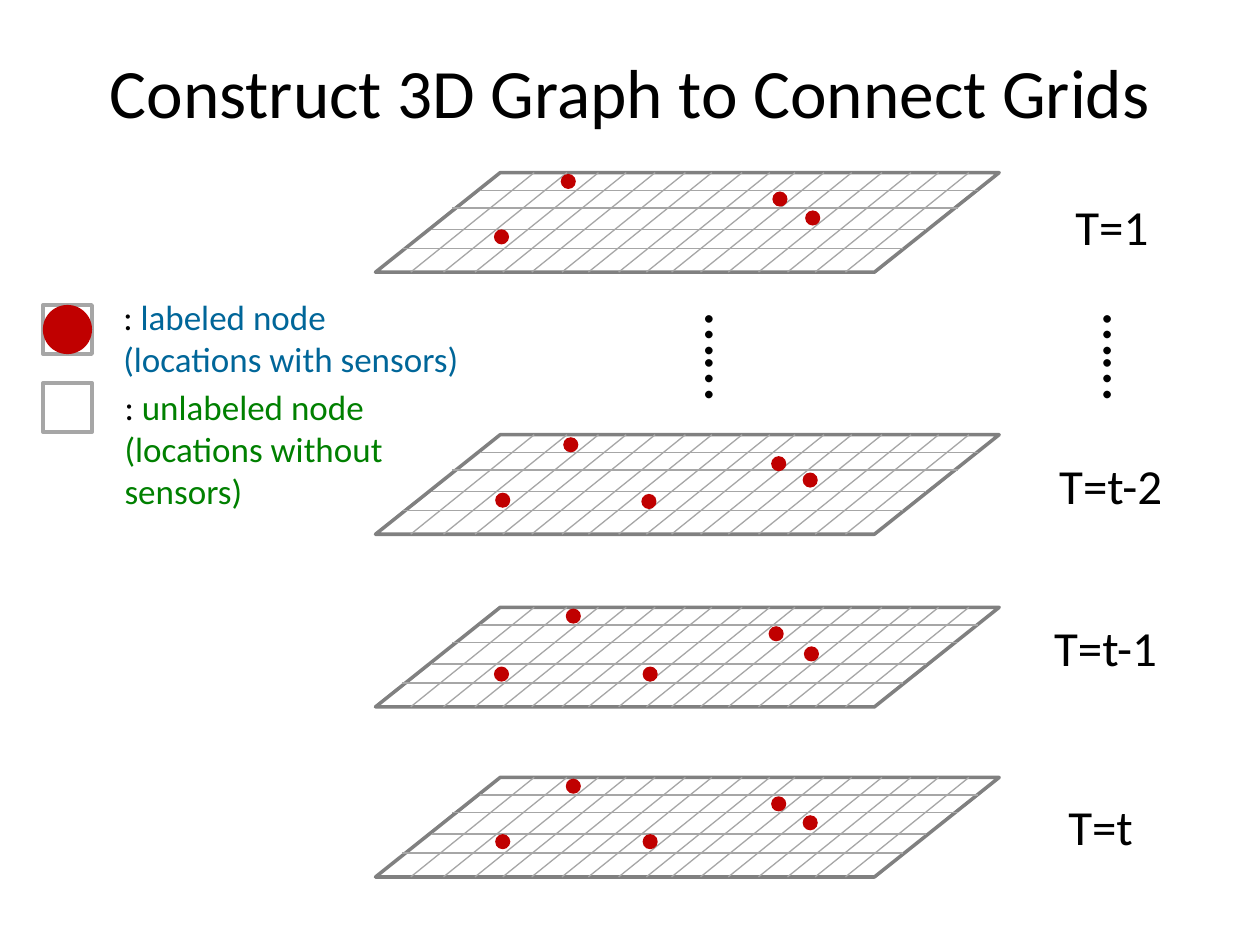
from lxml import etree
from pptx import Presentation
from pptx.dml.color import RGBColor
from pptx.enum import shapes, text
from pptx.oxml import ns
from pptx.util import Inches, Pt

BLACK = RGBColor(0x00, 0x00, 0x00)
RED = RGBColor(0xC0, 0x00, 0x00)
BLUE = RGBColor(0x00, 0x66, 0x99)
GREEN = RGBColor(0x00, 0x80, 0x00)
EDGE_GRAY = RGBColor(0x80, 0x80, 0x80)
GRID_GRAY = RGBColor(0xA6, 0xA6, 0xA6)
FONT = "Calibri"

TITLE = "Construct 3D Graph to Connect Grids"

# Each layer: label, label position, top of the grid, sensor positions (left, top)
LAYERS = [
    ("T=1", (8.26, 1.51), 1.37,
     [(6.39, 1.67), (4.45, 1.38), (3.92, 1.82), (6.13, 1.52)]),
    ("T=t-2", (8.25, 3.57), 3.45,
     [(6.12, 3.62), (3.93, 3.91), (6.37, 3.75), (4.47, 3.47), (5.09, 3.92)]),
    ("T=t-1", (8.21, 4.85), 4.82,
     [(6.38, 5.13), (4.49, 4.83), (5.1, 5.29), (3.92, 5.29), (6.1, 4.97)]),
    ("T=t", (8.17, 6.27), 6.17,
     [(6.37, 6.47), (4.49, 6.18), (5.1, 6.62), (3.93, 6.62), (6.12, 6.32)]),
]
GRID_LEFT, GRID_WIDTH, GRID_HEIGHT = 2.98, 4.95, 0.79
ROWS = [(3.81, 7.76, 0.14), (3.59, 7.6, 0.28), (3.43, 7.35, 0.45), (3.19, 7.17, 0.6)]
COLUMN_FEET = [3.26, 3.52, 3.77, 3.99, 4.22, 4.46, 4.67, 4.91,
               5.13, 5.33, 5.56, 5.78, 6.02, 6.25, 6.47, 6.71]
COLUMN_SLANT = 0.98
SENSOR_SIZE = 0.12

# Legend entries: frame, then lines of (words, colour) runs
LEGEND = [
    ((0.88, 2.3, 2.89, 0.77),
     [[(": ", BLACK), ("labeled node", BLUE)], [("(locations with sensors)", BLUE)]]),
    ((0.89, 3.01, 2.3, 1.11),
     [[(": ", BLACK), ("unlabeled node", GREEN)], [("(locations without sensors)", GREEN)]]),
]
KEY_LEFT, KEY_SIZE = 0.34, 0.39
LABELED_TOP, UNLABELED_TOP = 2.42, 3.04
ELLIPSIS_LEFTS = [5.25, 8.41]


def add_outline(slide, preset, frame, fill=None, edge=None):
    shape = slide.shapes.add_shape(preset, *map(Inches, frame))
    shape.shadow.inherit = False
    if fill is None:
        shape.fill.background()
    else:
        shape.fill.solid()
        shape.fill.fore_color.rgb = fill
    if edge is None:
        shape.line.fill.background()
    else:
        shape.line.color.rgb = edge
        shape.line.width = Pt(2)


def add_grid_line(slide, *ends):
    line = slide.shapes.add_connector(shapes.MSO_CONNECTOR.STRAIGHT, *map(Inches, ends))
    line.line.color.rgb = GRID_GRAY
    line.line.width = Pt(0.75)
    etree.SubElement(line.element.spPr, ns.qn("a:effectLst"))


def add_words(slide, frame, lines, size, align=text.PP_ALIGN.LEFT,
              anchor=text.MSO_ANCHOR.TOP, rotation=0):
    """Add a text box with one paragraph for each line of (words, colour) runs."""
    box = slide.shapes.add_textbox(*map(Inches, frame))
    box.rotation = rotation
    box.text_frame.word_wrap = True
    box.text_frame.vertical_anchor = anchor
    for number, runs in enumerate(lines):
        paragraph = (box.text_frame.add_paragraph() if number
                     else box.text_frame.paragraphs[0])
        paragraph.alignment = align
        for words, color in runs:
            run = paragraph.add_run()
            run.text = words
            run.font.name = FONT
            run.font.size = Pt(size)
            run.font.color.rgb = color


def add_layer(slide, label, label_at, top, sensors):
    add_outline(slide, shapes.MSO_SHAPE.FLOWCHART_DATA,
                (GRID_LEFT, top, GRID_WIDTH, GRID_HEIGHT), edge=EDGE_GRAY)
    for start, end, drop in ROWS:
        add_grid_line(slide, start, top + drop, end, top + drop)
    for foot in COLUMN_FEET:
        add_grid_line(slide, foot, top + GRID_HEIGHT, foot + COLUMN_SLANT, top)
    for sensor in sensors:
        add_outline(slide, shapes.MSO_SHAPE.OVAL,
                    (*sensor, SENSOR_SIZE, SENSOR_SIZE), fill=RED)
    add_words(slide, (*label_at, 1.13, 0.57), [[(label, BLACK)]], 28, text.PP_ALIGN.CENTER)


def main():
    deck = Presentation()
    deck.slide_width, deck.slide_height = Inches(10), Inches(7.5)
    slide = deck.slides.add_slide(deck.slide_layouts[6])

    add_words(slide, (0.5, 0.13, 9, 1.18), [[(TITLE, BLACK)]], 39.6,
              text.PP_ALIGN.CENTER, text.MSO_ANCHOR.MIDDLE)
    for layer in LAYERS:
        add_layer(slide, *layer)
    for left in ELLIPSIS_LEFTS:
        add_words(slide, (left, 2.58, 1.09, 0.71), [[("……", BLACK)]], 36, rotation=90)

    for top in (LABELED_TOP, UNLABELED_TOP):
        add_outline(slide, shapes.MSO_SHAPE.RECTANGLE,
                    (KEY_LEFT, top, KEY_SIZE, KEY_SIZE), edge=GRID_GRAY)
    add_outline(slide, shapes.MSO_SHAPE.OVAL,
                (KEY_LEFT, LABELED_TOP, KEY_SIZE, KEY_SIZE), fill=RED)
    for frame, lines in LEGEND:
        add_words(slide, frame, lines, 20)

    deck.save("out.pptx")


if __name__ == "__main__":
    main()
